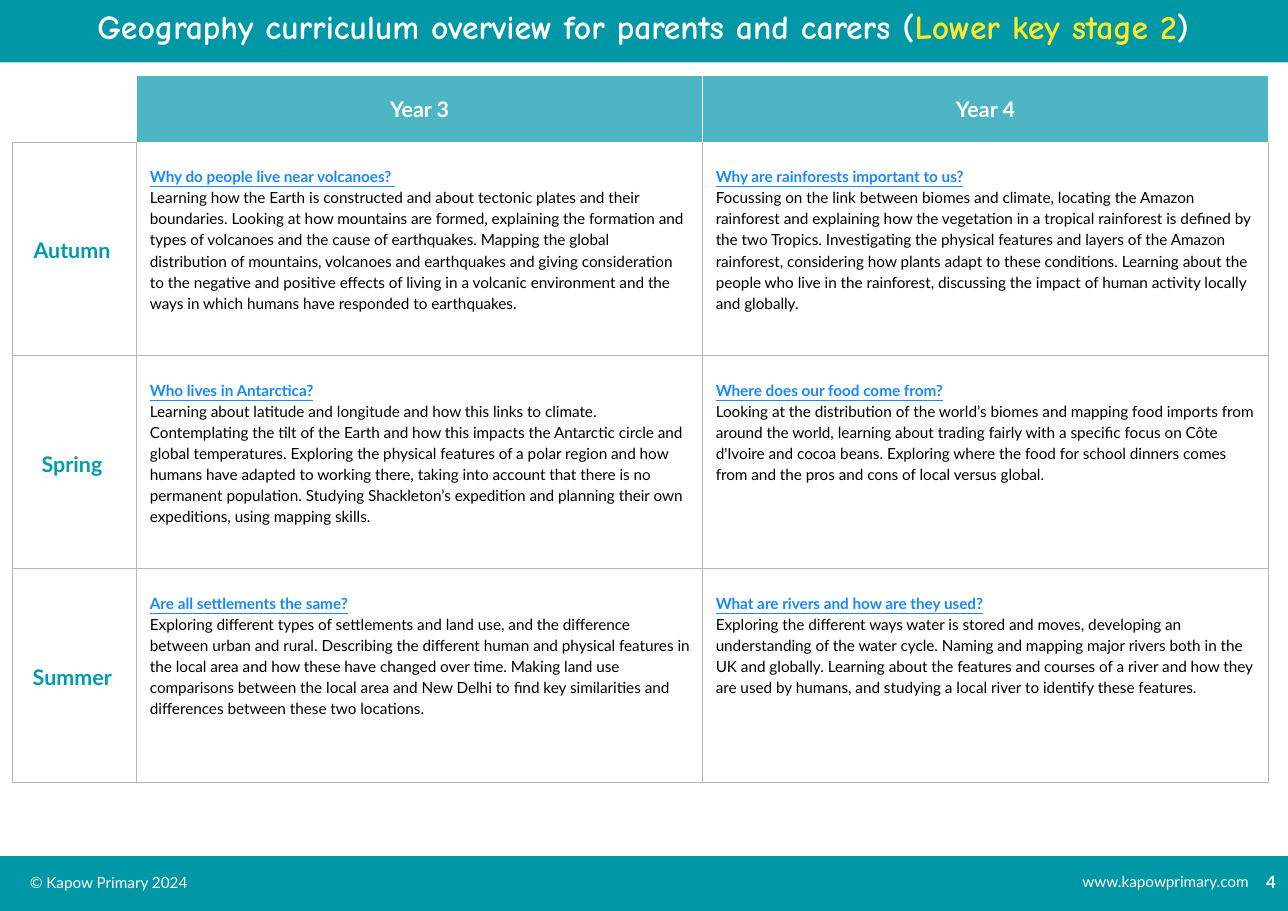
from lxml import etree
from pptx import Presentation
from pptx.dml.color import RGBColor
from pptx.enum.shapes import MSO_SHAPE
from pptx.enum.text import MSO_ANCHOR, PP_ALIGN
from pptx.oxml.ns import qn
from pptx.util import Pt

RECT = MSO_SHAPE.RECTANGLE
LEFT, CENTER, RIGHT = PP_ALIGN.LEFT, PP_ALIGN.CENTER, PP_ALIGN.RIGHT
TOP, MIDDLE = MSO_ANCHOR.TOP, MSO_ANCHOR.MIDDLE

WIDTH, HEIGHT = 841.68, 595.44
COLORS = {"band": "0097A7", "header": "4EB5C5", "term": "009BAF", "topic": "1789FC",
          "stage": "FAEA2A", "grid": "B7B7B7", "white": "FFFFFF", "black": "000000"}

YEARS = ["Year 3", "Year 4"]
TERMS = [
    ("Autumn ", [
        ("Why do people live near volcanoes? ",
         "Learning how the Earth is constructed and about tectonic plates and their boundaries. "
         "Looking at how mountains are formed, explaining the formation and types of volcanoes "
         "and the cause of earthquakes. Mapping the global distribution of mountains, volcanoes "
         "and earthquakes and giving consideration to the negative and positive effects of living "
         "in a volcanic environment and the ways in which humans have responded to earthquakes."),
        ("Why are rainforests important to us?",
         "Focussing on the link between biomes and climate, locating the Amazon rainforest and "
         "explaining how the vegetation in a tropical rainforest is defined by the two Tropics. "
         "Investigating the physical features and layers of the Amazon rainforest, considering "
         "how plants adapt to these conditions. Learning about the people who live in the "
         "rainforest, discussing the impact of human activity locally and globally.")]),
    ("Spring ", [
        ("Who lives in Antarctica?",
         "Learning about latitude and longitude and how this links to climate. Contemplating the "
         "tilt of the Earth and how this impacts the Antarctic circle and global temperatures. "
         "Exploring the physical features of a polar region and how humans have adapted to "
         "working there, taking into account that there is no permanent population. Studying "
         "Shackleton’s expedition and planning their own expeditions, using mapping skills."),
        ("Where does our food come from?",
         "Looking at the distribution of the world’s biomes and mapping food imports from around "
         "the world, learning about trading fairly with a specific focus on Côte d'Ivoire and "
         "cocoa beans. Exploring where the food for school dinners comes from and the pros and "
         "cons of local versus global.")]),
    ("Summer ", [
        ("Are all settlements the same?",
         "Exploring different types of settlements and land use, and the difference between urban "
         "and rural. Describing the different human and physical features in the local area and "
         "how these have changed over time. Making land use comparisons between the local area "
         "and New Delhi to find key similarities and differences between these two locations."),
        ("What are rivers and how are they used?",
         "Exploring the different ways water is stored and moves, developing an understanding of "
         "the water cycle. Naming and mapping major rivers both in the UK and globally. Learning "
         "about the features and courses of a river and how they are used by humans, and studying "
         "a local river to identify these features.")]),
]


class Page:
    def __init__(self, slide, font="Lato"):
        self.slide = slide
        self.font = font

    def color(self, name):
        return RGBColor.from_string(COLORS[name])

    def format(self, r, size, color, bold=False, underline=False, font=None):
        r.font.name = font or self.font
        r.font.size = Pt(size)
        r.font.bold = bold
        r.font.underline = underline
        r.font.color.rgb = self.color(color)

    def band(self, top, height):
        sp = self.slide.shapes.add_shape(RECT, 0, Pt(top), Pt(WIDTH), Pt(height))
        sp.shadow.inherit = False
        sp.fill.solid()
        sp.fill.fore_color.rgb = self.color("band")
        sp.line.fill.background()

    def text(self, box, parts, size, align=LEFT, inset=7.2, spacing=None, **style):
        sp = self.slide.shapes.add_textbox(*(Pt(v) for v in box))
        tf = sp.text_frame
        tf.word_wrap = True
        tf.margin_left = tf.margin_top = tf.margin_right = tf.margin_bottom = Pt(inset)
        p = tf.paragraphs[0]
        p.alignment = align
        p.line_spacing = spacing
        for words, color in parts:
            r = p.add_run()
            r.text = words
            self.format(r, size, color, **style)

    def table(self, left, top, widths, heights):
        frame = self.slide.shapes.add_table(len(heights), len(widths), Pt(left), Pt(top),
                                            Pt(sum(widths)), Pt(sum(heights)))
        table = frame.table
        table.first_row = table.horz_banding = False
        for column, width in zip(table.columns, widths):
            column.width = Pt(width)
        for row, height in zip(table.rows, heights):
            row.height = Pt(height)
        return table

    def cell(self, cell, borders, fill=None, anchor=TOP):
        """Borders are colour names for left, right, top and bottom."""
        cell.margin_left = cell.margin_right = Pt(8.6)
        cell.margin_top = cell.margin_bottom = Pt(10.8)
        cell.vertical_anchor = anchor
        props = cell._tc.get_or_add_tcPr()
        for side, name in zip("LRTB", borders):
            ln = etree.SubElement(props, qn(f"a:ln{side}"), w=str(Pt(0.75)))
            if name:
                solid = etree.SubElement(ln, qn("a:solidFill"))
                etree.SubElement(solid, qn("a:srgbClr"), val=COLORS[name])
            else:
                etree.SubElement(ln, qn("a:noFill"))
        if fill:
            cell.fill.solid()
            cell.fill.fore_color.rgb = self.color(fill)
        else:
            cell.fill.background()

    def paragraph(self, p, words, size, color, align=LEFT, spacing=None, **style):
        p.text = words
        p.alignment = align
        p.line_spacing = spacing
        self.format(p.runs[0], size, color, **style)


def main():
    prs = Presentation()
    prs.slide_width, prs.slide_height = Pt(WIDTH), Pt(HEIGHT)
    page = Page(prs.slides.add_slide(prs.slide_layouts[6]))

    # Footer and title bands
    page.band(559.6, HEIGHT - 559.6)
    page.text((12.4, 564.7, 142, 26.4), [("© Kapow Primary 2024", "white")], 10)
    page.text((681, 564, 142, 26.4), [("www.kapowprimary.com", "white")], 10, RIGHT)
    page.band(0, 40.8)
    page.text((-0.6, -2.1, WIDTH, 42.4),
              [("Geography curriculum overview for parents and carers (", "white"),
               ("Lower key stage 2", "stage"), (")", "white")],
              22, CENTER, inset=9.1, spacing=0.9, bold=True, font="Comic Neue")

    # Curriculum table: header row
    table = page.table(8.2, 49.6, [81.2, 369.8, 369.8], [40.6] + [139.5] * len(TERMS))
    page.cell(table.cell(0, 0), [None, "white", None, "grid"])
    for col, year in enumerate(YEARS, 1):
        cell = table.cell(0, col)
        page.cell(cell, ["white"] * 4, "header", MIDDLE)
        page.paragraph(cell.text_frame.paragraphs[0], year, 14, "white", CENTER, bold=True)

    # Curriculum table: one row per term
    for row, (term, topics) in enumerate(TERMS, 1):
        cell = table.cell(row, 0)
        page.cell(cell, ["grid"] * 4, "white", MIDDLE)
        page.paragraph(cell.text_frame.paragraphs[0], term, 14, "term", CENTER, 1.15, bold=True)
        for col, (topic, summary) in enumerate(topics, 1):
            cell = table.cell(row, col)
            page.cell(cell, ["grid", "grid", "white" if row == 1 else "grid", "grid"])
            tf = cell.text_frame
            page.paragraph(tf.paragraphs[0], topic, 10, "topic", spacing=1.5,
                           bold=True, underline=True)
            page.paragraph(tf.add_paragraph(), summary, 10, "black", spacing=1.15)

    # Page number
    page.text((791.3, 563, 50.4, 32), [("4", "white")], 11, RIGHT, inset=7.9, bold=True)

    prs.save("out.pptx")


if __name__ == "__main__":
    main()
